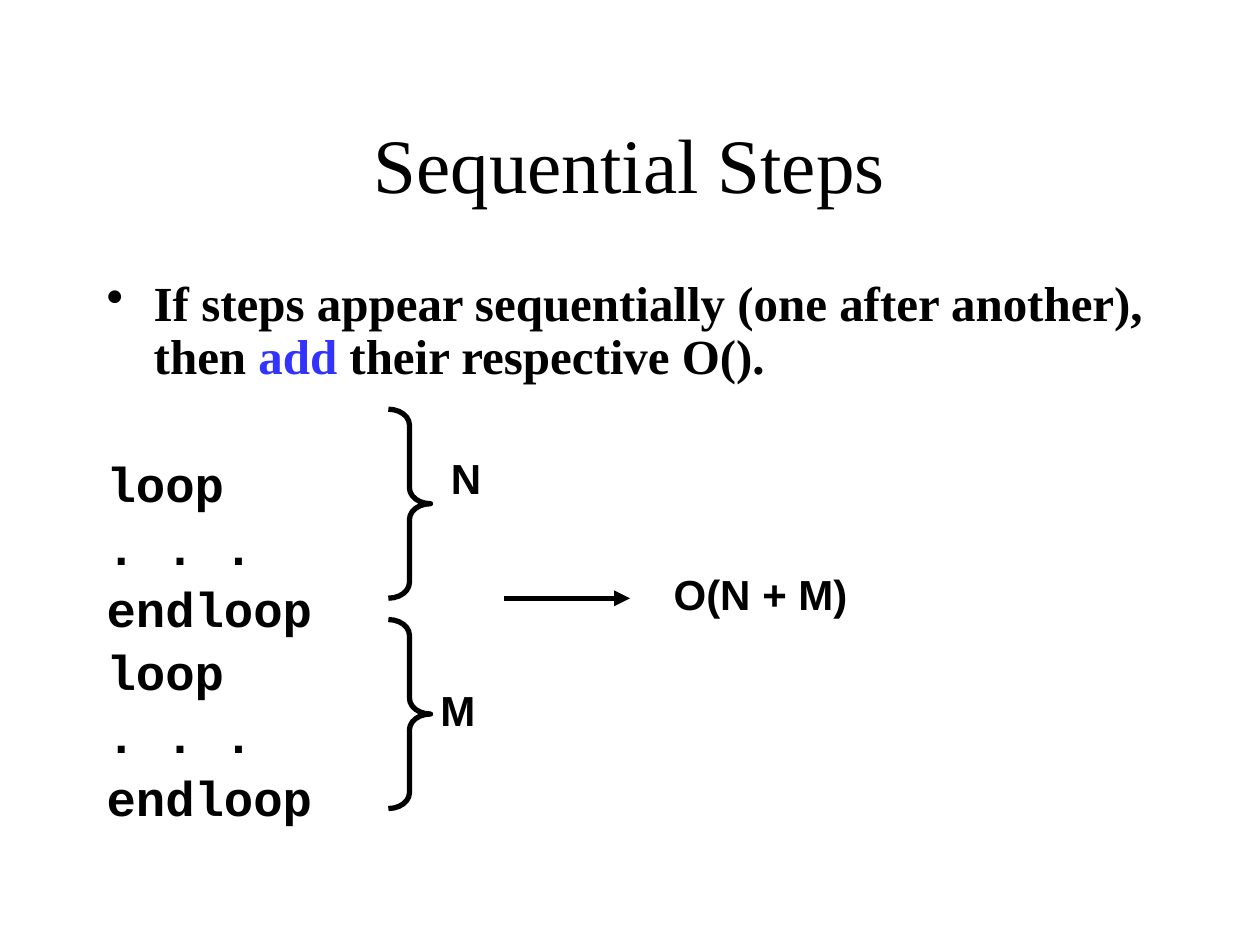
import dataclasses
import typing

import lxml.etree
import pptx
import pptx.dml.color
import pptx.enum.shapes
import pptx.enum.text
import pptx.oxml
import pptx.oxml.ns
import pptx.util

Cm = pptx.util.Cm
Pt = pptx.util.Pt
BLACK = pptx.dml.color.RGBColor(0x00, 0x00, 0x00)
BLUE = pptx.dml.color.RGBColor(0x33, 0x33, 0xFF)
SERIF, MONO, SANS = "Times New Roman", "Courier New", "Arial"

TITLE_FORMAT = {"name": SERIF, "size": Pt(44), "bold": False}
POINT_FORMAT = {"name": SERIF, "size": Pt(28), "bold": True}
CODE_FORMAT = {"name": MONO, "size": Pt(28), "bold": True}
LABEL_FORMAT = {"name": SANS, "size": Pt(24), "bold": True}

LOOP_LINES = ("loop", ". . .", "endloop")
LOOP_COUNT = 2
CODE_GAP = Pt(43)
HANGING = Cm(0.95)


@dataclasses.dataclass(frozen=True)
class Area:
    """Left, top, width and height in centimetres."""
    left: float
    top: float
    width: float
    height: float

    def lengths(self) -> tuple:
        return tuple(Cm(value) for value in dataclasses.astuple(self))


@dataclasses.dataclass(frozen=True)
class Label:
    text: str
    area: Area


TITLE_AREA = Area(1.9, 1.69, 21.59, 3.18)
BODY_AREA = Area(1.9, 5.5, 21.59, 11.43)
BRACES = [Area(7.83, top, 0.85, 3.81) for top in (8.25, 12.49)]
LABELS = [
    Label("N", Area(8.84, 9.0, 1.12, 1.27)),
    Label("M", Area(8.63, 13.67, 1.22, 1.27)),
    Label("O(N + M)", Area(13.33, 11.33, 4.01, 1.27)),
]


def add_box(page, area: Area, wrap: bool = True):
    box = page.shapes.add_textbox(*area.lengths())
    box.text_frame.word_wrap = wrap
    return box


def add_span(para, text: str, font_format: dict[str, typing.Any], color=BLACK) -> None:
    span = para.add_run()
    span.text = text
    for name, value in font_format.items():
        setattr(span.font, name, value)
    span.font.color.rgb = color


def add_child(parent, tag: str, **attributes: str):
    return lxml.etree.SubElement(parent, pptx.oxml.ns.qn(tag), attributes)


def set_body_spacing(para, space_before=None, bullet: str = "") -> None:
    """Hang the first line; without a given space, use 20% of the line."""
    para.line_spacing = 0.9
    properties = para._p.get_or_add_pPr()
    properties.set("marL", str(HANGING))
    properties.set("indent", str(-HANGING))
    if space_before is None:
        add_child(add_child(properties, "a:spcBef"), "a:spcPct", val="20000")
    else:
        para.space_before = space_before
    if bullet:
        add_child(properties, "a:buChar", char=bullet)


def add_title(page) -> None:
    frame = add_box(page, TITLE_AREA).text_frame
    frame.vertical_anchor = pptx.enum.text.MSO_ANCHOR.MIDDLE
    para = frame.paragraphs[0]
    para.alignment = pptx.enum.text.PP_ALIGN.CENTER
    add_span(para, "Sequential Steps", TITLE_FORMAT)


def add_body(page) -> None:
    frame = add_box(page, BODY_AREA).text_frame
    point = frame.paragraphs[0]
    set_body_spacing(point, bullet="•")
    add_span(point, "If steps appear sequentially (one after another), then ", POINT_FORMAT)
    add_span(point, "add", POINT_FORMAT, BLUE)
    add_span(point, " their respective O().", POINT_FORMAT)
    for index, line in enumerate(LOOP_LINES * LOOP_COUNT):
        para = frame.add_paragraph()
        set_body_spacing(para, CODE_GAP if index == 0 else None)
        add_span(para, line, CODE_FORMAT)


def add_brace(page, area: Area) -> None:
    brace = page.shapes.add_shape(
        pptx.enum.shapes.MSO_SHAPE.RIGHT_BRACE, *area.lengths())
    brace.adjustments[0] = 0.375
    brace.adjustments[1] = 0.5
    brace.shadow.inherit = False
    brace.fill.background()
    brace.line.color.rgb = BLACK
    brace.line.width = Pt(3)


def add_label(page, label: Label) -> None:
    frame = add_box(page, label.area, wrap=False).text_frame
    frame.auto_size = pptx.enum.text.MSO_AUTO_SIZE.SHAPE_TO_FIT_TEXT
    add_span(frame.paragraphs[0], label.text, LABEL_FORMAT)


def add_arrow(page) -> None:
    arrow = page.shapes.add_connector(
        pptx.enum.shapes.MSO_CONNECTOR.STRAIGHT,
        Cm(10.16), Cm(12.06), Cm(12.7), Cm(12.06))
    arrow.line.color.rgb = BLACK
    arrow.line.width = Pt(3)
    add_child(arrow.line._get_or_add_ln(), "a:tailEnd", type="triangle")
    add_child(arrow._element.spPr, "a:effectLst")


def main() -> None:
    deck = pptx.Presentation()
    deck.slide_width, deck.slide_height = Cm(25.4), Cm(19.05)
    page = deck.slides.add_slide(deck.slide_layouts[6])
    add_title(page)
    add_body(page)
    for area in BRACES:
        add_brace(page, area)
    for label in LABELS:
        add_label(page, label)
    add_arrow(page)
    deck.save("out.pptx")


if __name__ == "__main__":
    main()
